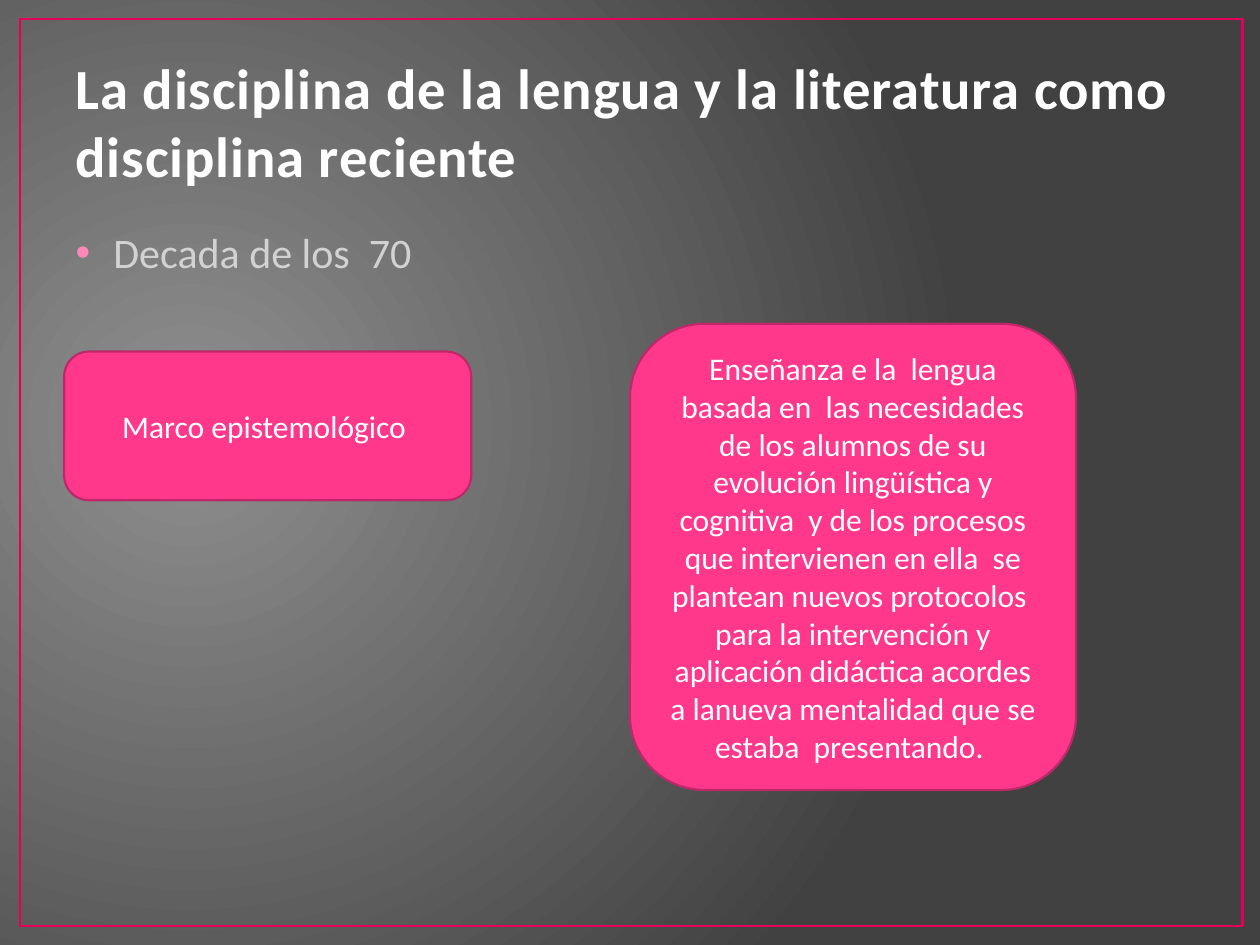
from pptx import Presentation
from pptx.dml.color import RGBColor
from pptx.enum.shapes import MSO_SHAPE
from pptx.enum.text import MSO_ANCHOR, MSO_AUTO_SIZE, PP_ALIGN
from pptx.oxml import parse_xml
from pptx.oxml.ns import nsdecls
from pptx.util import Inches, Pt

RECTANGLE, ROUNDED = MSO_SHAPE.RECTANGLE, MSO_SHAPE.ROUNDED_RECTANGLE
LEFT, CENTER = PP_ALIGN.LEFT, PP_ALIGN.CENTER
MIDDLE, BOTTOM = MSO_ANCHOR.MIDDLE, MSO_ANCHOR.BOTTOM
NO_AUTOFIT = MSO_AUTO_SIZE.NONE

FONT = "Calibri"
PINK, DARK_PINK, FRAME_PINK, BULLET_PINK = "FF388C", "BD2968", "E40059", "FF88BA"
TITLE_OUTLINE = "9C0042"
NEAR_WHITE, WHITE, LIGHT_GRAY = "FEFEFE", "FFFFFF", "D2D2D2"
GLOW_GRAY, DARK_GRAY = "8F8F8F", "414141"

TITLE = "La disciplina de la lengua y la literatura como disciplina reciente"
DECADE = "Decada de los  70"
FRAMEWORK = "Marco epistemológico "
TEACHING = (
    "Enseñanza e la  lengua basada en  las necesidades de los alumnos de su "
    "evolución lingüística y cognitiva  y de los procesos que intervienen en ella  "
    "se plantean nuevos protocolos  para la intervención y aplicación didáctica "
    "acordes a lanueva mentalidad que se estaba  presentando. "
)


def color(hex_value):
    return RGBColor.from_string(hex_value)


def solid_fill_xml(hex_value, namespaces=""):
    return f'<a:solidFill {namespaces}><a:srgbClr val="{hex_value}"/></a:solidFill>'


def place(shape, box):
    shape.left, shape.top, shape.width, shape.height = map(Inches, box)


def write(shape, text, size, text_color, alignment, bold=False):
    """Fill the shape with one formatted paragraph and return that paragraph."""
    frame = shape.text_frame
    frame.text = text
    frame.word_wrap = True
    frame.auto_size = NO_AUTOFIT
    paragraph = frame.paragraphs[0]
    paragraph.alignment = alignment
    font = paragraph.runs[0].font
    font.name, font.size, font.bold = FONT, Pt(size), bold
    font.color.rgb = color(text_color)
    return paragraph


def add_outlined_shape(slide, kind, box, line_color, line_width):
    shape = slide.shapes.add_shape(kind, *map(Inches, box))
    shape.shadow.inherit = False
    shape.line.color.rgb = color(line_color)
    shape.line.width = Pt(line_width)
    return shape


def paint_background(slide):
    """Radial gray gradient centred on the left of the slide."""
    stops = "".join(
        f'<a:gs pos="{position}"><a:srgbClr val="{gray}"/></a:gs>'
        for position, gray in ((0, GLOW_GRAY), (100000, DARK_GRAY))
    )
    fill = slide.background.fill
    fill.solid()
    properties = slide.element.cSld.bg.bgPr
    gradient = parse_xml(
        f'<a:gradFill {nsdecls("a")} rotWithShape="1"><a:gsLst>{stops}</a:gsLst>'
        '<a:path path="circle">'
        '<a:fillToRect l="15000" t="50000" r="85000" b="60000"/>'
        "</a:path></a:gradFill>"
    )
    properties.replace(properties[0], gradient)


def add_frame(slide, box):
    frame = add_outlined_shape(slide, RECTANGLE, box, FRAME_PINK, 1.5)
    frame.fill.background()
    slide.shapes.element.insert(2, frame.element)  # behind the placeholders


def fill_title(slide, box):
    title = slide.shapes.title
    place(title, box)
    paragraph = write(title, TITLE, 32.4, NEAR_WHITE, LEFT, bold=True)
    title.text_frame.vertical_anchor = BOTTOM
    run_properties = paragraph.runs[0].font.fill._xPr
    run_properties.set("spc", "50")
    run_properties.insert(0, parse_xml(
        f'<a:ln {nsdecls("a")} w="{Pt(1.05)}">{solid_fill_xml(TITLE_OUTLINE)}</a:ln>'
    ))


def fill_body(slide, box):
    body = slide.placeholders[1]
    place(body, box)
    paragraph = write(body, DECADE, 24, LIGHT_GRAY, LEFT)
    properties = paragraph._p.get_or_add_pPr()
    properties.set("marL", str(Inches(0.3)))
    properties.set("indent", str(Inches(-0.3)))
    for bullet_part in (
        f'<a:buClr {nsdecls("a")}><a:srgbClr val="{BULLET_PINK}"/></a:buClr>',
        f'<a:buFont {nsdecls("a")} typeface="Arial"/>',
        f'<a:buChar {nsdecls("a")} char="•"/>',
    ):
        properties.append(parse_xml(bullet_part))


def add_card(slide, box, text):
    card = add_outlined_shape(slide, ROUNDED, box, DARK_PINK, 1.25)
    card.fill.solid()
    card.fill.fore_color.rgb = color(PINK)
    write(card, text, 18, WHITE, CENTER)
    card.text_frame.vertical_anchor = MIDDLE


def main():
    presentation = Presentation()
    presentation.slide_width, presentation.slide_height = Inches(10), Inches(7.5)
    slide = presentation.slides.add_slide(presentation.slide_layouts[1])
    paint_background(slide)
    add_frame(slide, (0.16, 0.15, 9.7, 7.2))
    fill_title(slide, (0.5, 0.3, 9, 1.25))
    fill_body(slide, (0.5, 1.75, 9, 4.95))
    add_card(slide, (0.51, 2.79, 3.23, 1.18), FRAMEWORK)
    add_card(slide, (5, 2.57, 3.54, 3.7), TEACHING)
    presentation.save("out.pptx")


if __name__ == "__main__":
    main()
